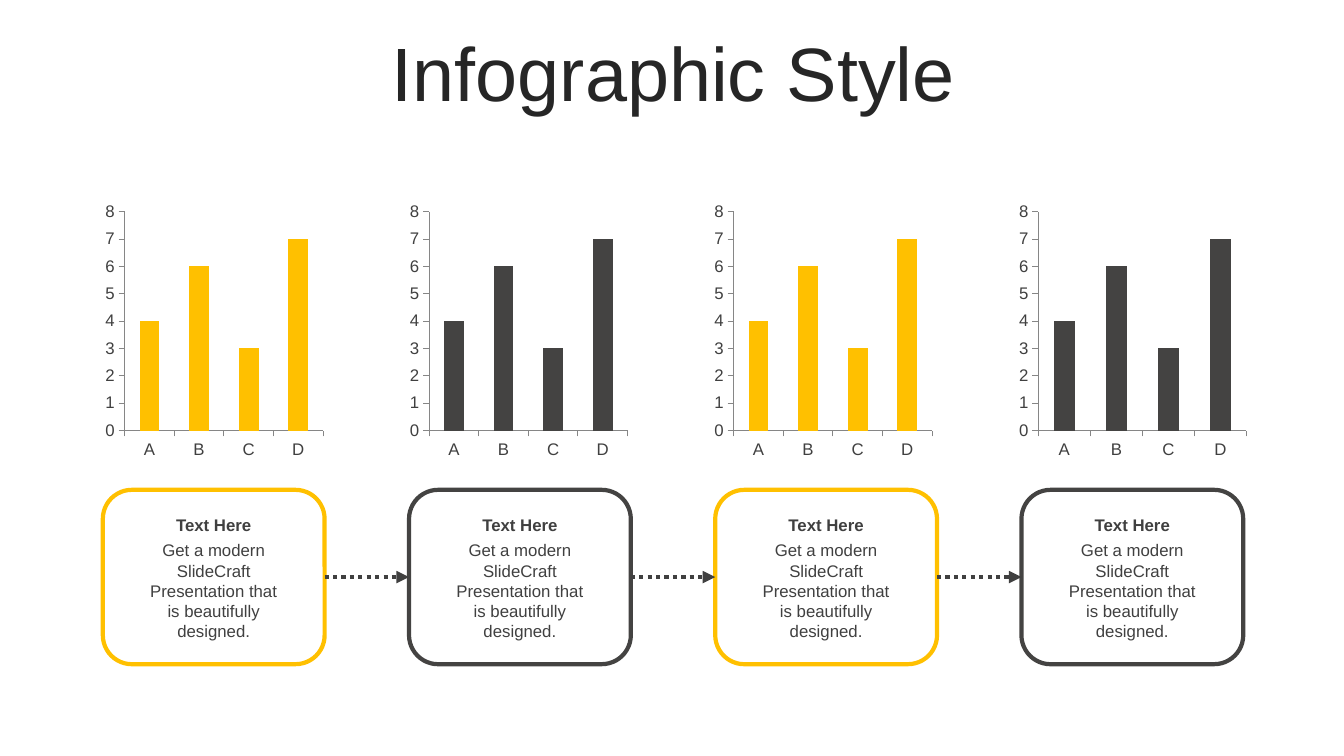
from dataclasses import dataclass

from lxml import etree
from pptx import Presentation
from pptx.chart.data import CategoryChartData
from pptx.dml.color import RGBColor
from pptx.enum.chart import XL_CHART_TYPE, XL_TICK_MARK
from pptx.enum.dml import MSO_LINE
from pptx.enum.shapes import MSO_CONNECTOR, MSO_SHAPE
from pptx.enum.text import MSO_ANCHOR, PP_ALIGN
from pptx.oxml.ns import qn
from pptx.util import Inches, Pt

STACKED = XL_CHART_TYPE.COLUMN_STACKED
TICK_OUT, TICK_NONE = XL_TICK_MARK.OUTSIDE, XL_TICK_MARK.NONE
DOTTED = MSO_LINE.ROUND_DOT
STRAIGHT = MSO_CONNECTOR.STRAIGHT
ROUNDED = MSO_SHAPE.ROUNDED_RECTANGLE
CENTER = PP_ALIGN.CENTER
MIDDLE, TOP = MSO_ANCHOR.MIDDLE, MSO_ANCHOR.TOP
RIGHT_SIDE, LEFT_SIDE = 3, 1


@dataclass(frozen=True)
class Theme:
    font: str = "Arial"
    title: RGBColor = RGBColor(0x26, 0x26, 0x26)
    text: RGBColor = RGBColor(0x40, 0x40, 0x40)
    axis: RGBColor = RGBColor(0x86, 0x86, 0x86)
    white: RGBColor = RGBColor(0xFF, 0xFF, 0xFF)
    amber: RGBColor = RGBColor(0xFF, 0xC0, 0x00)
    dark: RGBColor = RGBColor(0x44, 0x43, 0x42)
    title_size: int = 54
    text_size: int = 12
    line_width: int = 3


THEME = Theme()
CATEGORIES = ["A", "B", "C", "D"]
VALUES = [4, 6, 3, 7]
HEADING = "Text Here"
BODY = "Get a modern SlideCraft Presentation that is beautifully designed."
COLORS = [THEME.amber, THEME.dark] * 2
CHART_WIDTHS = [2.25, 2.25, 2.25, 2.35]
CHART_LEFT, CHART_PITCH = 1, 3.02
CARD_LEFT, CARD_PITCH = 1.02, 3.037


def write(tf, text, size=THEME.text_size, color=THEME.text, bold=False, anchor=TOP):
    tf.word_wrap = True
    tf.vertical_anchor = anchor
    p = tf.paragraphs[0]
    p.alignment = CENTER
    r = p.add_run()
    r.text = text
    r.font.name = THEME.font
    r.font.size = Pt(size)
    r.font.bold = bold
    r.font.color.rgb = color
    return p


def add_title(s, text, x, y, w, h):
    title = s.shapes.title
    title.left, title.top, title.width, title.height = map(Inches, (x, y, w, h))
    p = write(title.text_frame, text, size=THEME.title_size, color=THEME.title, anchor=MIDDLE)
    p.line_spacing = 0.9
    p.space_before = Pt(10)


def add_bar_chart(s, color, x, y, w, h):
    data = CategoryChartData()
    data.categories = CATEGORIES
    data.add_series("Series 1", VALUES)
    chart = s.shapes.add_chart(STACKED, *map(Inches, (x, y, w, h)), data).chart
    chart.has_legend = False
    chart.has_title = False
    chart.font.name = THEME.font
    chart.font.size = Pt(THEME.text_size)
    chart.font.color.rgb = THEME.text
    for axis in (chart.category_axis, chart.value_axis):
        axis.has_major_gridlines = False
        axis.major_tick_mark = TICK_OUT
        axis.minor_tick_mark = TICK_NONE
        axis.format.line.color.rgb = THEME.axis
    chart.value_axis.minimum_scale = 0
    chart.value_axis.maximum_scale = 8
    chart.value_axis.major_unit = 1
    plot = chart.plots[0]
    plot.vary_by_categories = False
    plot.gap_width = 150
    plot.overlap = 100
    fill = plot.series[0].format.fill
    fill.solid()
    fill.fore_color.rgb = color


def add_card(s, color, x, y, w, h):
    card = s.shapes.add_shape(ROUNDED, *map(Inches, (x, y, w, h)))
    card.shadow.inherit = False
    card.fill.solid()
    card.fill.fore_color.rgb = THEME.white
    card.line.color.rgb = color
    card.line.width = Pt(THEME.line_width)
    for text, dy, height, bold in ((BODY, 0.45, 1.11, False), (HEADING, 0.2, 0.3, True)):
        box = s.shapes.add_textbox(*map(Inches, (x + 0.35, y + dy, w - 0.7, height)))
        write(box.text_frame, text, bold=bold)
    return card


def add_arrow(s, start, end):
    arrow = s.shapes.add_connector(STRAIGHT, 0, 0, 0, 0)
    arrow.begin_connect(start, RIGHT_SIDE)
    arrow.end_connect(end, LEFT_SIDE)
    arrow.line.color.rgb = THEME.text
    arrow.line.width = Pt(THEME.line_width)
    arrow.line.dash_style = DOTTED
    etree.SubElement(arrow.line._get_or_add_ln(), qn("a:tailEnd"), type="triangle")
    etree.SubElement(arrow._element.spPr, qn("a:effectLst"))


def build_slide(prs):
    s = prs.slides.add_slide(prs.slide_layouts[5])
    add_title(s, "Infographic Style", 0.35, 0.37, 12.66, 0.79)
    cards = []
    for i, (color, width) in enumerate(zip(COLORS, CHART_WIDTHS)):
        add_bar_chart(s, color, CHART_LEFT + i * CHART_PITCH, 1.96, width, 2.64)
        cards.append(add_card(s, color, CARD_LEFT + i * CARD_PITCH, 4.86, 2.2, 1.73))
    for start, end in zip(cards, cards[1:]):
        add_arrow(s, start, end)


def main():
    prs = Presentation()
    prs.slide_width = Inches(13.33)
    prs.slide_height = Inches(7.5)
    build_slide(prs)
    prs.save("out.pptx")


if __name__ == "__main__":
    main()
